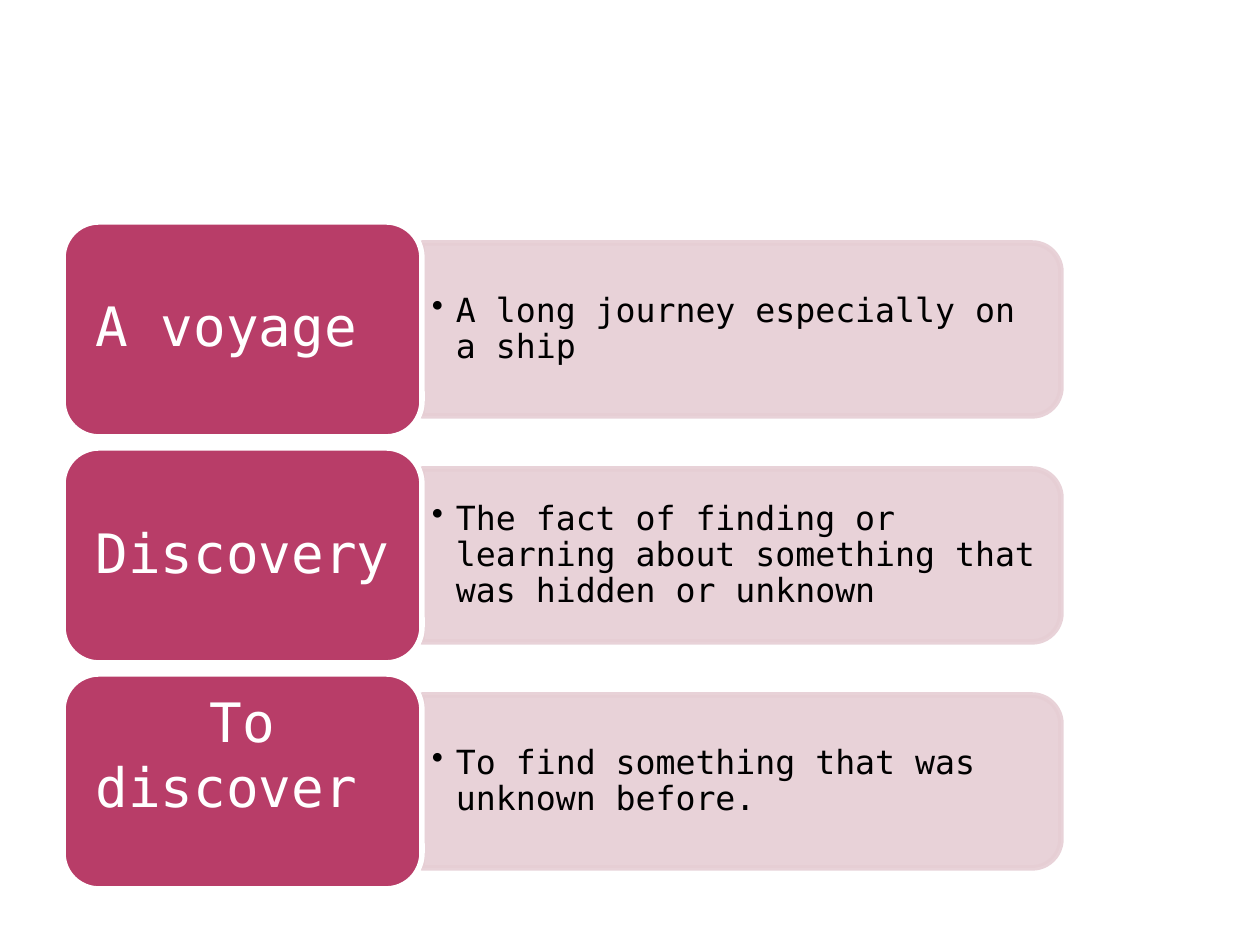
from lxml.etree import SubElement
from pptx import Presentation
from pptx.dml.color import RGBColor
from pptx.enum.shapes import MSO_SHAPE
from pptx.enum.text import MSO_ANCHOR, PP_ALIGN
from pptx.oxml.ns import qn
from pptx.util import Pt

PX = 914400 // 126
FONT = "DejaVu Sans Mono"
ROSE, PINK, WHITE, BLACK = "B83D68", "E6CED4", "FFFFFF", "000000"
ENTRIES = [
    {"term": "A voyage ", "definition": "A long journey especially on a ship",
     "spacing": 0.9, "bottom": 8},
    {"term": "Discovery ",
     "definition": "The fact of finding or learning about something that was hidden or unknown",
     "spacing": 0.9, "bottom": 8},
    {"term": "To discover ", "definition": "To find something that was unknown before.",
     "spacing": 1.0, "bottom": 65},
]
TOP, PITCH = 222, 226
TERM_LEFT, TERM_WIDTH, TERM_HEIGHT = 63, 359, 215
BAR_LEFT, BAR_WIDTH, BAR_HEIGHT = TERM_LEFT + TERM_WIDTH, 639, 173
TEXT_WIDTH, TEXT_HEIGHT = 630, 155


def color(value):
    return RGBColor.from_string(value)


def box(left, top, width, height):
    return [round(length * PX) for length in (left, top, width, height)]


def add_panel(slide, kind, place, fill, line, opacity=100):
    shape = slide.shapes.add_shape(kind, *place)
    shape.shadow.inherit = False
    shape.fill.solid()
    shape.fill.fore_color.rgb = color(fill)
    shape.line.color.rgb = color(line)
    shape.line.width = Pt(3.15)
    if opacity < 100:
        for element in list(shape._element.spPr.iter(qn("a:srgbClr"))):
            SubElement(element, qn("a:alpha")).set("val", str(opacity * 1000))
    return shape


def write(shape, text, size, text_color, spacing, insets, bullet=False):
    frame = shape.text_frame
    frame.word_wrap = True
    frame.vertical_anchor = MSO_ANCHOR.MIDDLE
    frame.margin_left, frame.margin_top, frame.margin_right, frame.margin_bottom = (
        inset * PX for inset in insets)
    paragraph = frame.paragraphs[0]
    paragraph.text = text
    paragraph.line_spacing = spacing
    paragraph.alignment = PP_ALIGN.LEFT if bullet else PP_ALIGN.CENTER
    if bullet:
        properties = paragraph._p.get_or_add_pPr()
        properties.set("marL", str(24 * PX))
        properties.set("indent", str(-24 * PX))
        SubElement(properties, qn("a:buChar")).set("char", "•")
    paragraph.font.name = FONT
    paragraph.font.size = Pt(size)
    paragraph.font.color.rgb = color(text_color)


def add_entry(slide, index, entry):
    top = TOP + index * PITCH
    middle = top + TERM_HEIGHT / 2
    center = BAR_LEFT + BAR_WIDTH / 2
    bar = add_panel(
        slide, MSO_SHAPE.ROUND_2_SAME_RECTANGLE,
        box(center - BAR_HEIGHT / 2, middle - BAR_WIDTH / 2, BAR_HEIGHT, BAR_WIDTH),
        PINK, PINK, 90)
    bar.rotation = 90
    definition = slide.shapes.add_textbox(
        *box(BAR_LEFT, middle - TEXT_HEIGHT / 2, TEXT_WIDTH, TEXT_HEIGHT))
    write(definition, entry["definition"], 19, BLACK, 0.9, (10, 5, 10, 5), bullet=True)
    term = add_panel(slide, MSO_SHAPE.ROUNDED_RECTANGLE,
                     box(TERM_LEFT, top, TERM_WIDTH, TERM_HEIGHT), ROSE, WHITE)
    write(term, entry["term"], 31, WHITE, entry["spacing"], (16, 8, 16, entry["bottom"]))


def main():
    presentation = Presentation()
    presentation.slide_width = 1260 * PX
    presentation.slide_height = 945 * PX
    slide = presentation.slides.add_slide(presentation.slide_layouts[6])
    for index, entry in enumerate(ENTRIES):
        add_entry(slide, index, entry)
    presentation.save("out.pptx")


if __name__ == "__main__":
    main()
